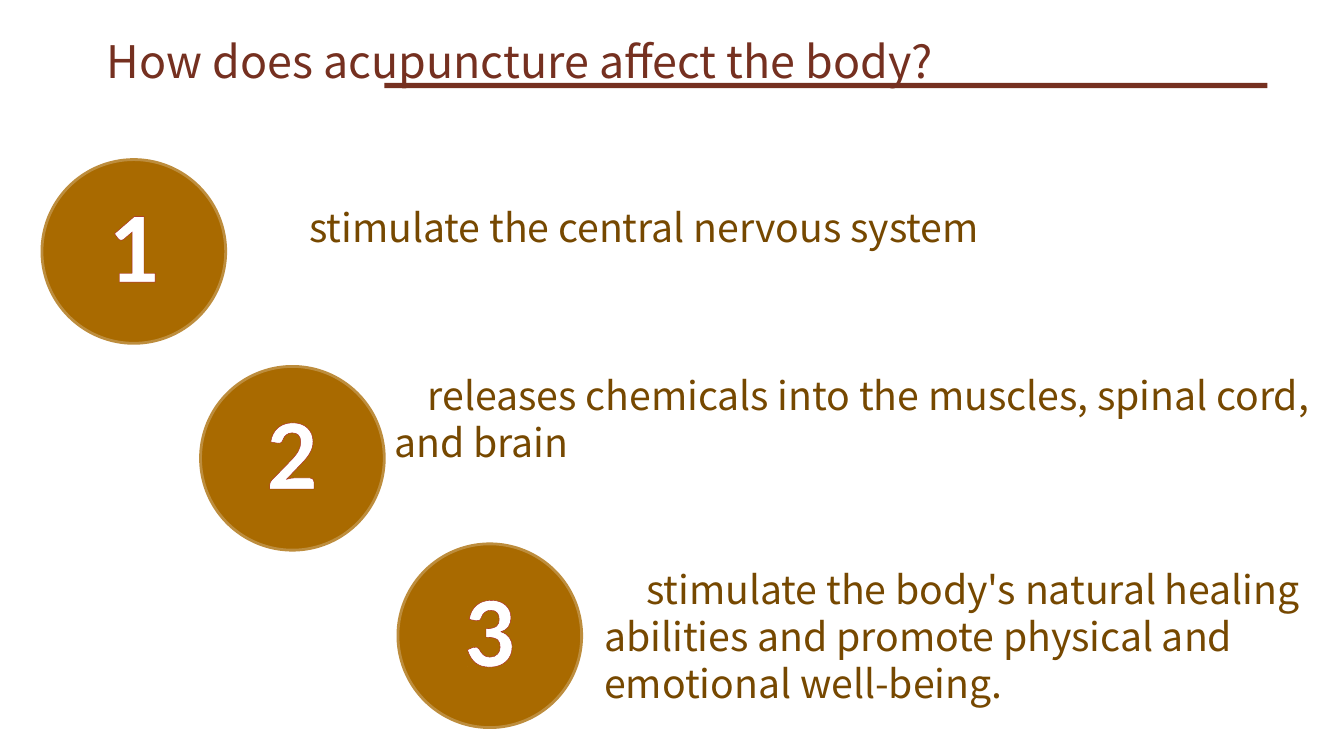
from dataclasses import dataclass

from lxml import etree
from pptx import Presentation
from pptx import util as u
from pptx.dml.color import RGBColor
from pptx.enum import shapes, text
from pptx.oxml import ns
from pptx.shapes.autoshape import Shape
from pptx.slide import Slide

PX = 9525  # EMU in one px


@dataclass(frozen=True)
class Theme:
    title: str = "753020"
    body: str = "764800"
    disc: str = "A96A00"
    rim: str = "BD8D3D"
    number: str = "FFFFFF"
    number_edge: str = "A21011"
    text_font: str = "Noto Sans CJK SC"
    number_font: str = "Calibri"
    title_size: int = 32
    body_size: int = 28
    number_size: int = 72


@dataclass(frozen=True)
class Box:
    left: int
    top: int
    width: int
    height: int

    def emu(self) -> tuple[int, ...]:
        return tuple(v * PX for v in (self.left, self.top, self.width, self.height))


@dataclass(frozen=True)
class Effect:
    disc_left: int
    disc_top: int
    words: str
    box: Box
    indent: int = 32
    wrap: bool = True


THEME = Theme()
DISC = 175
TITLE = Box(49, 32, 893, 52)
RULE = Box(366, 79, 841, 5)
EFFECTS = [
    Effect(40, 152, "stimulate the central nervous system",
           Box(253, 189, 729, 55), wrap=False),
    Effect(191, 349, "releases chemicals into the muscles, spinal cord, and brain",
           Box(366, 349, 892, 100)),
    Effect(379, 518, "stimulate the body's natural healing abilities and promote "
           "physical and emotional well-being.", Box(566, 534, 713, 145), indent=40),
]


def add_filled(s: Slide, kind: shapes.MSO_SHAPE, box: Box, color: str) -> Shape:
    sp = s.shapes.add_shape(kind, *box.emu())
    sp.shadow.inherit = False
    sp.fill.solid()
    sp.fill.fore_color.rgb = RGBColor.from_string(color)
    sp.line.fill.background()
    return sp


def add_text(s: Slide, box: Box, words: str, size: int, color: str,
             font: str = THEME.text_font, bold: bool = False,
             centred: bool = False, wrap: bool = True) -> Shape:
    sp = s.shapes.add_textbox(*box.emu())
    tf = sp.text_frame
    tf.word_wrap = wrap
    tf.auto_size = text.MSO_AUTO_SIZE.SHAPE_TO_FIT_TEXT
    p = tf.paragraphs[0]
    p.add_run().text = words
    p.alignment = text.PP_ALIGN.CENTER if centred else text.PP_ALIGN.LEFT
    p.font.name, p.font.size, p.font.bold = font, u.Pt(size), bold
    p.font.color.rgb = RGBColor.from_string(color)
    return sp


def add_title(s: Slide) -> None:
    add_filled(s, shapes.MSO_SHAPE.RECTANGLE, RULE, THEME.title)
    sp = add_text(s, TITLE, "How does acupuncture affect the body?",
                  THEME.title_size, THEME.title, centred=True)
    tf = sp.text_frame
    tf.vertical_anchor = text.MSO_ANCHOR.MIDDLE
    tf.margin_left = tf.margin_top = tf.margin_right = tf.margin_bottom = 0


def outline_text(sp: Shape, color: str, width: float) -> None:
    """Draw a thin edge around the letters."""
    rPr = sp.text_frame.paragraphs[0].runs[0]._r.get_or_add_rPr()
    ln = etree.Element(ns.qn("a:ln"), w=str(u.Pt(width)))
    fill = etree.SubElement(ln, ns.qn("a:solidFill"))
    etree.SubElement(fill, ns.qn("a:srgbClr"), val=color)
    rPr.insert(0, ln)


def add_effect(s: Slide, number: int, effect: Effect) -> None:
    left, top = effect.disc_left, effect.disc_top
    disc = add_filled(s, shapes.MSO_SHAPE.OVAL, Box(left, top, DISC, DISC), THEME.disc)
    disc.line.color.rgb = RGBColor.from_string(THEME.rim)
    disc.line.width = u.Pt(2)
    digit = add_text(s, Box(left + 53, top + 16, 68, 126), str(number),
                     THEME.number_size, THEME.number, THEME.number_font,
                     bold=True, centred=True, wrap=False)
    outline_text(digit, THEME.number_edge, 0.8)
    sp = add_text(s, effect.box, effect.words, THEME.body_size, THEME.body,
                  wrap=effect.wrap)
    pPr = sp.text_frame.paragraphs[0]._p.get_or_add_pPr()
    pPr.set("marL", "0")
    pPr.set("indent", str(effect.indent * PX))


def main() -> None:
    prs = Presentation()
    prs.slide_width, prs.slide_height = 1280 * PX, 720 * PX
    s = prs.slides.add_slide(prs.slide_layouts[6])
    add_title(s)
    for number, effect in enumerate(EFFECTS, 1):
        add_effect(s, number, effect)
    prs.save("out.pptx")


if __name__ == "__main__":
    main()
